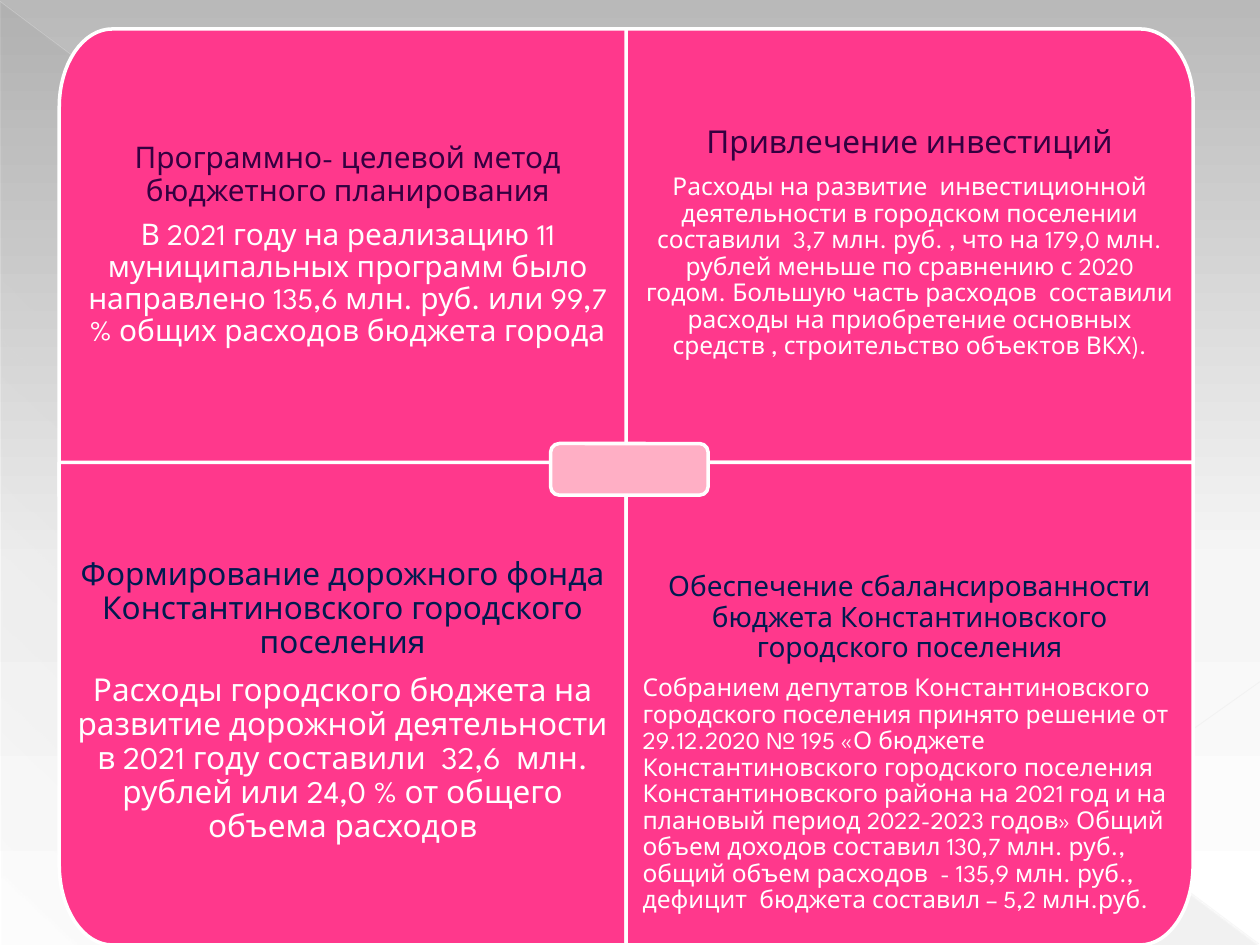
from math import cos, pi, sin

from lxml.etree import SubElement
from pptx import Presentation
from pptx.dml.color import RGBColor
from pptx.enum.shapes import MSO_CONNECTOR, MSO_SHAPE
from pptx.enum.text import MSO_ANCHOR, PP_ALIGN
from pptx.oxml import parse_xml
from pptx.oxml.ns import nsdecls, qn
from pptx.util import Inches, Pt

FONT = "League Spartan"
COLORS = {
    "panel": "FF388C", "badge": "FFAFC5", "white": "FFFFFF",
    "plum": "340040", "navy": "001A4F", "veil": "666666",
    "bg_top": "B9B9B9", "bg_middle": "F6F6F6",
    "long_ray": "E8E8E8", "short_ray": "EAEAEA",
}
CORNER_WIDTH = 0.42
ARC_STEPS = 16
SIDE_INSET = 0.13
INNER_INSET = 0.76  # keeps text away from the central badge

# Each quarter: box, rounded corner (right, bottom), insets, anchor, paragraphs
QUARTERS = [
    {"box": (0.47, 0.23, 4.58, 3.71), "corner": (False, False),
     "insets": (0.49, INNER_INSET), "anchor": MSO_ANCHOR.MIDDLE,
     "title": ("Программно- целевой метод бюджетного планирования", 17, "plum"),
     "body": ("В 2021 году на реализацию 11 муниципальных программ было "
              "направлено 135,6 млн. руб. или 99,7 % общих расходов бюджета "
              "города", 17, PP_ALIGN.CENTER)},
    {"box": (4.97, 0.23, 4.5, 3.44), "corner": (True, False),
     "insets": (0.72, INNER_INSET), "anchor": MSO_ANCHOR.MIDDLE,
     "title": ("Привлечение инвестиций", 18, "plum"),
     "body": ("Расходы на развитие  инвестиционной деятельности в городском "
              "поселении составили  3,7 млн. руб. , что на 179,0 млн. рублей "
              "меньше по сравнению с 2020 годом. Большую часть расходов  "
              "составили расходы на приобретение основных средств , "
              "строительство объектов ВКХ).", 14, PP_ALIGN.CENTER)},
    {"box": (0.47, 3.67, 4.5, 3.83), "corner": (False, True),
     "insets": (INNER_INSET, SIDE_INSET), "anchor": MSO_ANCHOR.TOP,
     "title": ("Формирование дорожного фонда Константиновского городского "
               "поселения", 18, "navy"),
     "body": ("Расходы городского бюджета на развитие дорожной деятельности в "
              "2021 году составили  32,6  млн. рублей или 24,0 % от общего "
              "объема расходов", 18, PP_ALIGN.CENTER)},
    {"box": (4.97, 3.67, 4.5, 3.83), "corner": (True, True),
     "insets": (INNER_INSET, SIDE_INSET), "anchor": MSO_ANCHOR.MIDDLE,
     "title": ("Обеспечение сбалансированности бюджета Константиновского "
               "городского поселения", 16, "navy"),
     "body": ("Собранием депутатов Константиновского городского поселения "
              "принято решение от 29.12.2020 № 195 «О бюджете "
              "Константиновского городского поселения Константиновского "
              "района на 2021 год и на плановый период 2022-2023 годов» Общий "
              "объем доходов составил 130,7 млн. руб., общий объем расходов  "
              "- 135,9 млн. руб., дефицит  бюджета составил – 5,2 млн.руб.",
              14, PP_ALIGN.LEFT)},
]


def rgb(name):
    return RGBColor.from_string(COLORS[name])


def set_all(target, values):
    for name, value in values.items():
        setattr(target, name, value)


def set_gradient(fill, owner, stops, angle):
    """Fill with (position %, colour, opacity %) stops."""
    fill.gradient()
    stop_xml = "".join(
        f'<a:gs pos="{position * 1000}"><a:srgbClr val="{COLORS[color]}">'
        f'<a:alpha val="{opacity * 1000}"/></a:srgbClr></a:gs>'
        for position, color, opacity in stops)
    gradient = parse_xml(
        f'<a:gradFill {nsdecls("a")} rotWithShape="1"><a:gsLst>{stop_xml}'
        f'</a:gsLst><a:lin ang="{angle * 60000}" scaled="0"/></a:gradFill>')
    plain = owner.xpath(".//a:gradFill")[0]
    plain.getparent().replace(plain, gradient)


def add_ray(slide, start, end, color, width, opacity):
    ray = slide.shapes.add_connector(
        MSO_CONNECTOR.STRAIGHT, *map(Inches, start + end))
    ray.line.color.rgb = rgb(color)
    ray.line.width = Pt(width)
    tint = ray.element.xpath(".//a:ln//a:srgbClr")[0]
    SubElement(tint, qn("a:alpha")).set("val", str(opacity * 1000))
    SubElement(ray.element.spPr, qn("a:effectLst"))


def style_tile(tile, color):
    tile.shadow.inherit = False
    tile.fill.solid()
    tile.fill.fore_color.rgb = rgb(color)
    tile.line.color.rgb = rgb("white")
    tile.line.width = Pt(2)


def add_quarter_outline(slide, box, corner):
    """Rectangle with one elliptical corner, mirrored to the given side."""
    left, top, width, height = box
    right, bottom = corner
    corner_height = height / 6
    angles = [pi / 2 * step / ARC_STEPS for step in range(ARC_STEPS + 1)]
    outline = [(CORNER_WIDTH * (1 - cos(a)), corner_height * (1 - sin(a)))
               for a in angles]
    outline += [(width, 0), (width, height), (0, height)]
    points = [(Inches(left + (width - x if right else x)),
               Inches(top + (height - y if bottom else y)))
              for x, y in outline]
    builder = slide.shapes.build_freeform(*points[0])
    builder.add_line_segments(points[1:], close=True)
    return builder.convert_to_shape()


def write_paragraph(paragraph, text, size, color, align):
    set_all(paragraph, {"alignment": align, "line_spacing": 0.9,
                        "space_after": Pt(round(size * 0.42))})
    run = paragraph.add_run()
    run.text = text
    set_all(run.font, {"name": FONT, "size": Pt(size)})
    run.font.color.rgb = rgb(color)


def add_quarter(slide, quarter):
    panel = add_quarter_outline(slide, quarter["box"], quarter["corner"])
    style_tile(panel, "panel")
    frame = panel.text_frame
    top_inset, bottom_inset = quarter["insets"]
    set_all(frame, {
        "word_wrap": True, "vertical_anchor": quarter["anchor"],
        "margin_left": Inches(SIDE_INSET), "margin_right": Inches(SIDE_INSET),
        "margin_top": Inches(top_inset), "margin_bottom": Inches(bottom_inset),
    })
    write_paragraph(frame.paragraphs[0], *quarter["title"], PP_ALIGN.CENTER)
    text, size, align = quarter["body"]
    write_paragraph(frame.add_paragraph(), text, size, "white", align)


def add_backdrop(slide):
    set_gradient(slide.background.fill, slide.element,
                 [(0, "bg_top", 100), (60, "bg_middle", 100),
                  (100, "white", 100)], 90)
    veil = slide.shapes.add_shape(
        MSO_SHAPE.RIGHT_TRIANGLE, *map(Inches, (0.01, 0.02, 9.98, 7.48)))
    veil.shadow.inherit = False
    veil.line.fill.background()
    set_gradient(veil.fill, veil.element,
                 [(0, "veil", 10), (70, "veil", 8), (100, "veil", 1)], 133)
    add_ray(slide, (0, 0.01), (9.99, 7.49), "long_ray", 0.39, 35)
    add_ray(slide, (10, 5.41), (7.07, 7.49), "short_ray", 0.47, 45)


def main():
    presentation = Presentation()
    set_all(presentation, {"slide_width": Inches(10),
                           "slide_height": Inches(7.5)})
    slide = presentation.slides.add_slide(presentation.slide_layouts[6])

    # Grey backdrop with diagonal rays
    add_backdrop(slide)

    # Four budget topics
    for quarter in QUARTERS:
        add_quarter(slide, quarter)

    # Central badge
    badge = slide.shapes.add_shape(
        MSO_SHAPE.ROUNDED_RECTANGLE, *map(Inches, (4.37, 3.52, 1.25, 0.41)))
    style_tile(badge, "badge")

    presentation.save("out.pptx")


if __name__ == "__main__":
    main()
